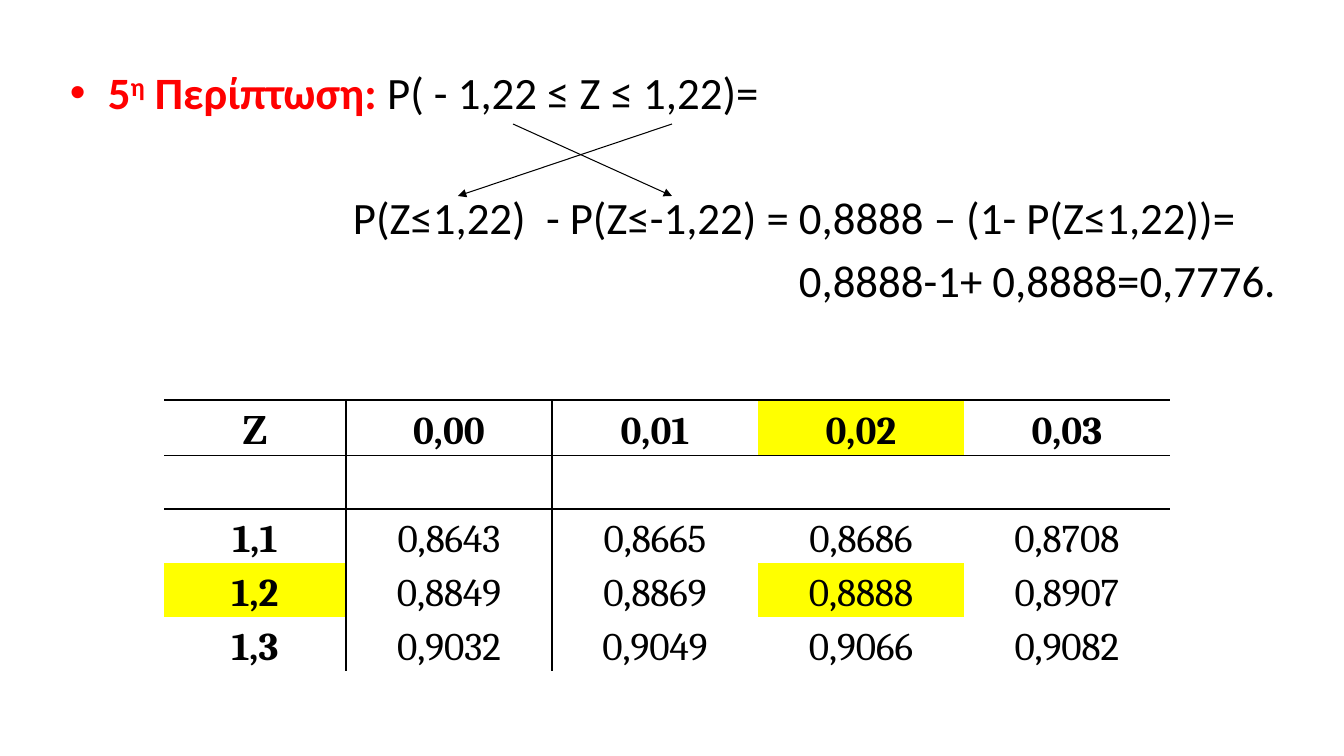
from dataclasses import dataclass

from pptx import Presentation
from pptx.dml.color import RGBColor
from pptx.enum.shapes import MSO_CONNECTOR
from pptx.enum.text import MSO_ANCHOR, PP_ALIGN
from pptx.oxml.ns import qn
from pptx.oxml.xmlchemy import OxmlElement
from pptx.util import Emu, Pt

STRAIGHT = MSO_CONNECTOR.STRAIGHT
MIDDLE = MSO_ANCHOR.MIDDLE
CENTER, JUSTIFY = PP_ALIGN.CENTER, PP_ALIGN.JUSTIFY
BLACK = RGBColor(0, 0, 0)
RED = RGBColor(255, 0, 0)
YELLOW = RGBColor(255, 255, 0)
PX_PER_INCH = 100.8
PLAIN_TABLE_STYLE = "{2D5ABB26-0587-4C30-8999-92F81FD0307C}"


@dataclass(frozen=True)
class Phrase:
    text: str
    color: RGBColor = BLACK
    bold: bool = False
    raised: bool = False


@dataclass(frozen=True)
class Step:
    """One line of the calculation; lengths in px, space before in points."""
    phrases: tuple[Phrase, ...]
    margin: int
    space_before: int
    bullet_indent: int = 0


@dataclass(frozen=True)
class Arrow:
    start: tuple[int, int]
    end: tuple[int, int]


STEPS = (
    Step((Phrase("5", RED, True), Phrase("η", RED, True, True),
          Phrase(" Περίπτωση: ", RED, True), Phrase("P( - 1,22 ≤ Ζ ≤ 1,22)=")),
         38, 6, 38),
    Step((Phrase("P(Z≤1,22)  - P(Z≤-1,22) = 0,8888 – (1- P(Z≤1,22))="),), 283, 51),
    Step((Phrase("0,8888-1+ 0,8888=0,7776."),), 729, 6),
)
ARROWS = (Arrow((672, 124), (458, 196)), Arrow((513, 124), (672, 196)))
Z_TABLE = (
    ("Ζ", "0,00", "0,01", "0,02", "0,03"),
    ("", "", "", "", ""),
    ("1,1", "0,8643", "0,8665", "0,8686", "0,8708"),
    ("1,2", "0,8849", "0,8869", "0,8888", "0,8907"),
    ("1,3", "0,9032", "0,9049", "0,9066", "0,9082"),
)
HIGHLIGHTED = {(0, 3), (3, 0), (3, 3)}


def px(length: int) -> Emu:
    return Emu(round(length * 914400 / PX_PER_INCH))


def apply_format(target, values: dict) -> None:
    for name, value in values.items():
        setattr(target, name, value)


def add_run(paragraph, phrase: Phrase, font_name: str, size: int) -> None:
    run = paragraph.add_run()
    run.text = phrase.text
    apply_format(run.font, {"name": font_name, "size": Pt(size), "bold": phrase.bold})
    run.font.color.rgb = phrase.color
    if phrase.raised:
        run.font._element.set("baseline", "30000")


def add_steps(slide) -> None:
    box = slide.shapes.add_textbox(px(60), px(60), px(1254), px(612))
    frame = box.text_frame
    frame.word_wrap = True
    for index, step in enumerate(STEPS):
        paragraph = frame.add_paragraph() if index else frame.paragraphs[0]
        apply_format(paragraph, {"alignment": JUSTIFY,
                                 "space_before": Pt(step.space_before)})
        properties = paragraph._p.get_or_add_pPr()
        properties.set("marL", str(px(step.margin)))
        properties.set("indent", str(-px(step.bullet_indent)))
        if step.bullet_indent:
            font = OxmlElement("a:buFont")
            font.set("typeface", "Arial")
            bullet = OxmlElement("a:buChar")
            bullet.set("char", "•")
            properties.extend((font, bullet))
        for phrase in step.phrases:
            add_run(paragraph, phrase, "Calibri", 32)


def add_borders(cell, sides: str) -> None:
    """Rule the given sides, named by the letters L, R, T and B in that order."""
    for side in sides:
        line = OxmlElement(f"a:ln{side}")
        line.set("w", str(Pt(1)))
        fill = OxmlElement("a:solidFill")
        color = OxmlElement("a:srgbClr")
        color.set("val", str(BLACK))
        fill.append(color)
        line.append(fill)
        cell._tc.get_or_add_tcPr().append(line)


def border_sides(row: int, column: int) -> str:
    vertical = {0: "R", 1: "L"}.get(column, "")
    horizontal = {0: "TB", 1: "T"}.get(row, "")
    return vertical + horizontal


def add_z_table(slide) -> None:
    frame = slide.shapes.add_table(len(Z_TABLE), len(Z_TABLE[0]),
                                   px(164), px(400), px(1008), px(271))
    table = frame.table
    apply_format(table, {"first_row": False, "horz_banding": False})
    table._tbl.tblPr.find(qn("a:tableStyleId")).text = PLAIN_TABLE_STYLE
    for index, column in enumerate(table.columns):
        column.width = px(206 if index else 182)
    for index, row in enumerate(table.rows):
        row.height = px(54 if index else 55)
    for row, values in enumerate(Z_TABLE):
        for column, value in enumerate(values):
            cell = table.cell(row, column)
            apply_format(cell, {"margin_left": px(1), "margin_right": px(1),
                                "margin_top": px(0 if row else 1),
                                "margin_bottom": 0, "vertical_anchor": MIDDLE})
            add_borders(cell, border_sides(row, column))
            if (row, column) in HIGHLIGHTED:
                cell.fill.solid()
                cell.fill.fore_color.rgb = YELLOW
            else:
                cell.fill.background()
            if value:
                paragraph = cell.text_frame.paragraphs[0]
                apply_format(paragraph, {"alignment": CENTER, "line_spacing": 1.15})
                is_heading = row == 0 or column == 0
                add_run(paragraph, Phrase(value, bold=is_heading), "Cambria", 28)


def add_arrow(slide, arrow: Arrow) -> None:
    points = [px(length) for length in (*arrow.start, *arrow.end)]
    connector = slide.shapes.add_connector(STRAIGHT, *points)
    connector.line.color.rgb = BLACK
    connector.line.width = Pt(0.75)
    head = OxmlElement("a:tailEnd")
    head.set("type", "triangle")
    connector.line._get_or_add_ln().append(head)
    connector._element.spPr.append(OxmlElement("a:effectLst"))


def main() -> None:
    presentation = Presentation()
    apply_format(presentation, {"slide_width": px(1344), "slide_height": px(756)})
    slide = presentation.slides.add_slide(presentation.slide_layouts[6])
    add_steps(slide)
    add_z_table(slide)
    for arrow in ARROWS:
        add_arrow(slide, arrow)
    presentation.save("out.pptx")


if __name__ == "__main__":
    main()
